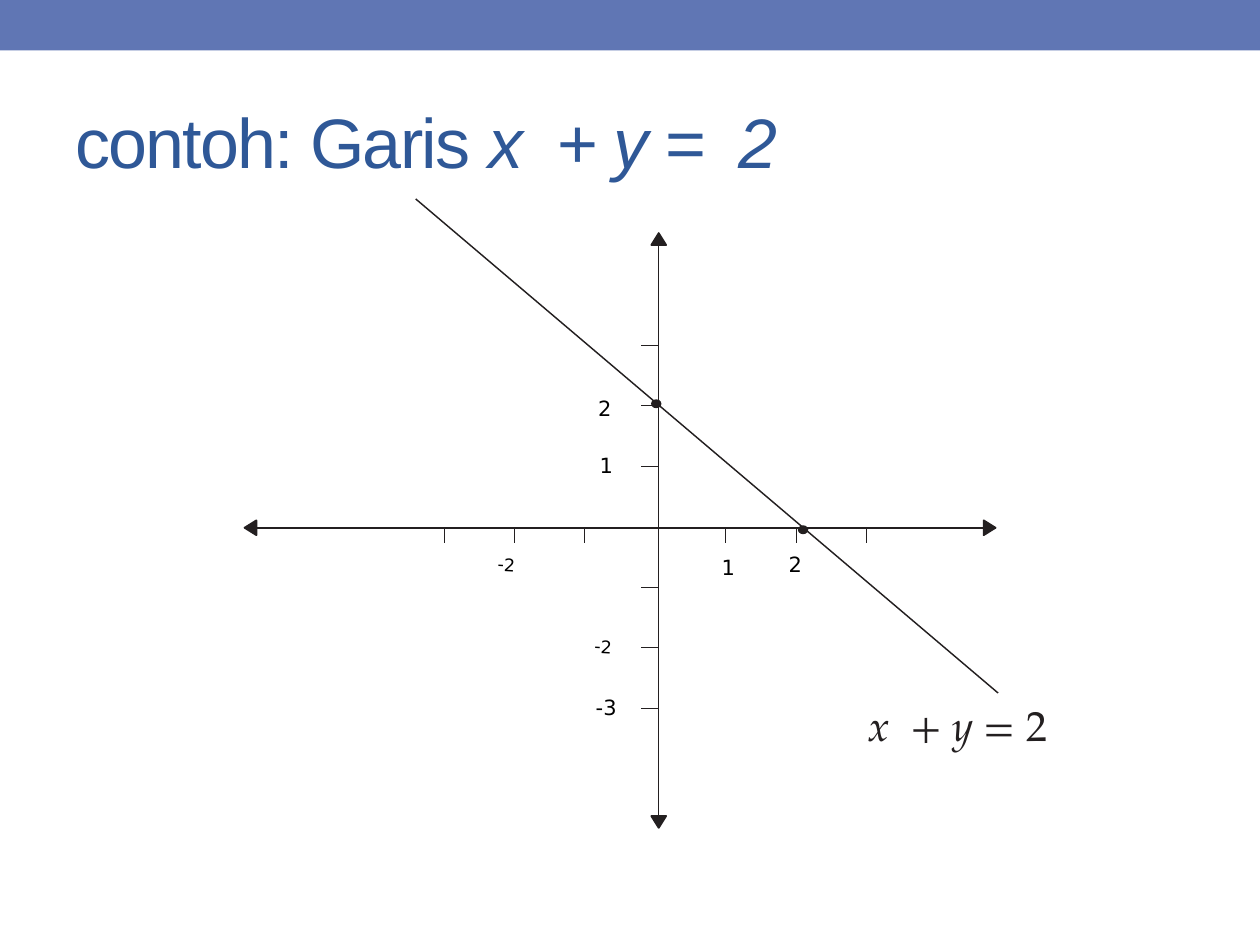
from dataclasses import dataclass

from lxml import etree
from pptx import Presentation
from pptx import util as u
from pptx.dml.color import RGBColor
from pptx.enum import shapes, text
from pptx.oxml.ns import qn


@dataclass(frozen=True)
class Theme:
    band: RGBColor = RGBColor(0x60, 0x76, 0xB4)
    title: RGBColor = RGBColor(0x2F, 0x58, 0x97)
    ink: RGBColor = RGBColor(0x23, 0x1F, 0x20)
    label: RGBColor = RGBColor(0, 0, 0)
    paper: RGBColor = RGBColor(0xFF, 0xFF, 0xFF)
    title_font: str = "Arial"
    label_font: str = "DejaVu Sans"
    formula_font: str = "TeX Gyre Pagella"
    title_size: int = 40
    formula_size: int = 24
    label_size: int = 12
    small_label_size: int = 10
    axis_width: float = 0.81
    tick_width: float = 0.5
    arrow_width: float = 1


class GraphSlide:
    """Draws on one slide; all lengths are centimetres."""

    def __init__(self, slide, theme):
        self.slide = slide
        self.theme = theme

    def filled(self, kind, left, top, width, height, color):
        shape = self.slide.shapes.add_shape(
            kind, u.Cm(left), u.Cm(top), u.Cm(width), u.Cm(height))
        shape.shadow.inherit = False
        shape.fill.solid()
        shape.fill.fore_color.rgb = color
        shape.line.fill.background()
        return shape

    def text(self, box, runs, font, size, color,
             anchor=text.MSO_ANCHOR.TOP, spacing=0):
        """Write (wording, italic) runs in a text box; spacing is in points."""
        shape = self.slide.shapes.add_textbox(*map(u.Cm, box))
        frame = shape.text_frame
        frame.word_wrap = True
        frame.vertical_anchor = anchor
        paragraph = frame.paragraphs[0]
        paragraph.font.name = font
        paragraph.font.size = u.Pt(size)
        paragraph.font.color.rgb = color
        for wording, italic in runs:
            run = paragraph.add_run()
            run.text = wording
            run.font.italic = italic
            if spacing:
                run._r.get_or_add_rPr().set("spc", str(spacing * 100))
        return shape

    def label(self, wording, left, top, size, rotation=0):
        shape = self.text((left, top, 1.07, 0.8), [(wording, False)],
                          self.theme.label_font, size, self.theme.label)
        shape.fill.solid()
        shape.fill.fore_color.rgb = self.theme.paper
        shape.rotation = rotation

    def line(self, start, end, width):
        connector = self.slide.shapes.add_connector(
            shapes.MSO_CONNECTOR.STRAIGHT, *map(u.Cm, (*start, *end)))
        connector.line.color.rgb = self.theme.ink
        connector.line.width = u.Pt(width)
        etree.SubElement(connector._element.spPr, qn("a:effectLst"))

    def arrowhead(self, tip, direction, length=0.24, half=0.15):
        """Draw a triangle whose tip points along the unit direction."""
        x, y = tip
        dx, dy = direction
        base_x, base_y = x - dx * length, y - dy * length
        corners = [(base_x + dy * half, base_y + dx * half),
                   (base_x - dy * half, base_y - dx * half)]
        builder = self.slide.shapes.build_freeform(u.Cm(x), u.Cm(y))
        builder.add_line_segments([(u.Cm(a), u.Cm(b)) for a, b in corners])
        shape = builder.convert_to_shape()
        shape.shadow.inherit = False
        shape.fill.solid()
        shape.fill.fore_color.rgb = self.theme.ink
        shape.line.color.rgb = self.theme.ink
        shape.line.width = u.Pt(self.theme.arrow_width)

    def axis(self, start, end, direction):
        self.line(start, end, self.theme.axis_width)
        dx, dy = direction
        self.arrowhead(start, (-dx, -dy))
        self.arrowhead(end, direction)

    def dot(self, x, y, width=0.21, height=0.18):
        self.filled(shapes.MSO_SHAPE.OVAL, x - width / 2, y - height / 2,
                    width, height, self.theme.ink)


def main():
    presentation = Presentation()
    presentation.slide_width = u.Cm(25.4)
    presentation.slide_height = u.Cm(19.05)
    slide = presentation.slides.add_slide(presentation.slide_layouts[6])
    theme = Theme()
    graph = GraphSlide(slide, theme)

    graph.filled(shapes.MSO_SHAPE.RECTANGLE, 0, 0, 25.4, 1.02, theme.band)
    graph.text((1.27, 1.47, 22.86, 2.74),
               [("contoh: Garis ", False), ("x  + y =  2", True)],
               theme.title_font, theme.title_size, theme.title,
               anchor=text.MSO_ANCHOR.MIDDLE, spacing=-1)
    graph.text((17.25, 13.97, 6.02, 1.93), [("x  + y = ", True), ("2", False)],
               theme.formula_font, theme.formula_size, theme.ink)

    labels = [
        ("2", 15.65, 11.0, theme.label_size, 0),
        ("1", 14.3, 11.05, theme.label_size, 0),
        ("-2", 9.78, 11.05, theme.small_label_size, 3.4),
        ("2", 11.81, 7.85, theme.label_size, 0),
        ("1", 11.84, 8.99, theme.label_size, 0),
        ("-2", 11.73, 12.7, theme.small_label_size, 3.4),
        ("-3", 11.76, 13.87, theme.label_size, 0),
    ]
    for label in labels:
        graph.label(*label)

    axis_x, axis_y = 13.28, 10.64
    graph.axis((axis_x, 4.7), (axis_x, 16.69), (0, 1))
    graph.axis((4.93, axis_y), (20.07, axis_y), (1, 0))

    # The ticks are centred slightly off the axes.
    tick_x, tick_y, step_x, step_y = 13.21, 10.62, 1.42, 1.22
    for number in (-3, -2, -1, 1, 2, 3):
        x = tick_x + number * step_x
        y = tick_y - number * step_y
        graph.line((x, 10.67), (x, 10.95), theme.tick_width)
        graph.line((12.93, y), (axis_x, y), theme.tick_width)

    graph.line((8.38, 4.01), (20.12, 13.97), theme.axis_width)
    graph.dot(16.19, 10.68)
    graph.dot(13.23, 8.14)

    presentation.save("out.pptx")


if __name__ == "__main__":
    main()
